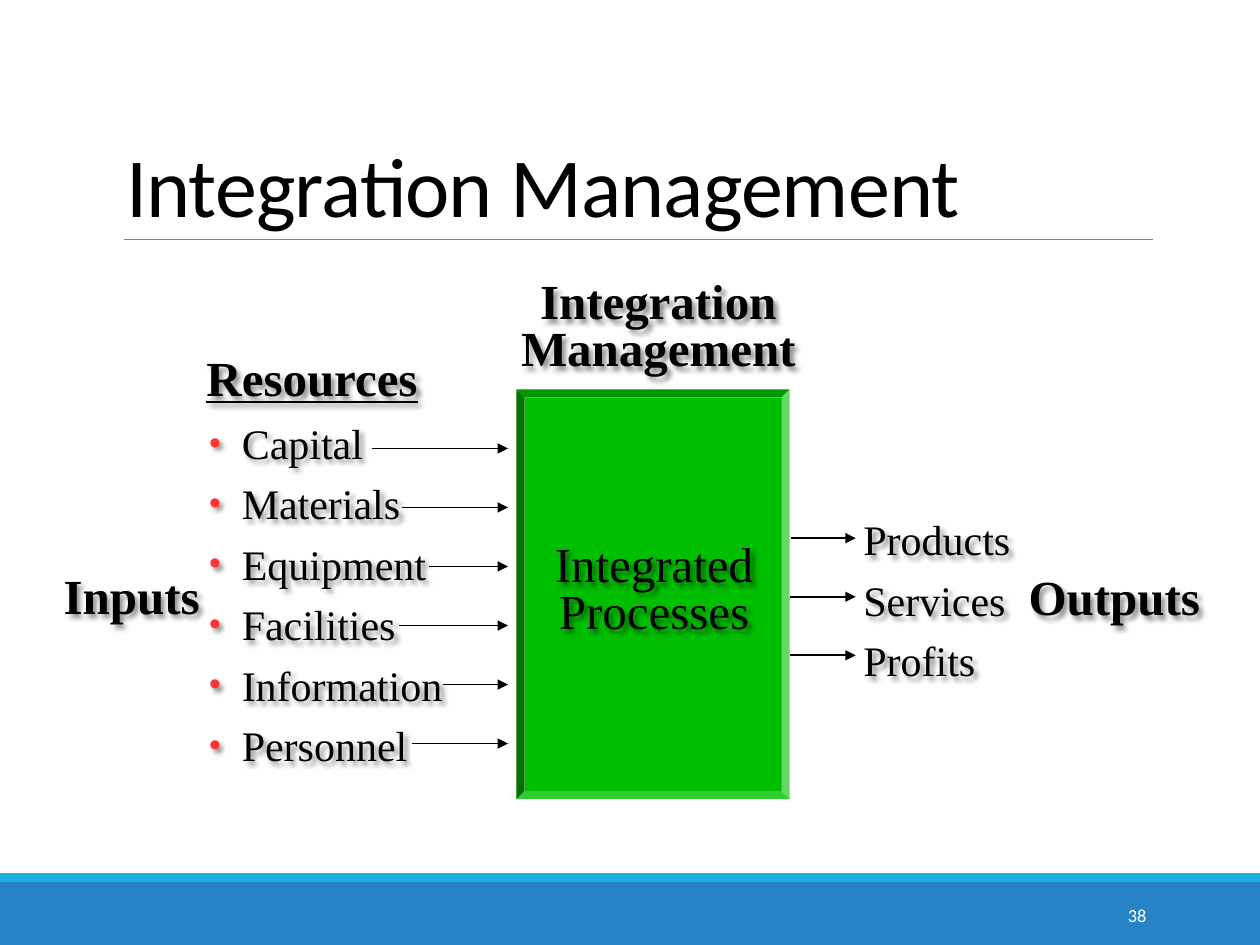
from lxml.etree import SubElement as Sub
from pptx import Presentation
from pptx.dml.color import RGBColor as Rgb
from pptx.enum.shapes import MSO_CONNECTOR as Conn, MSO_SHAPE as Kind
from pptx.enum.text import MSO_ANCHOR as Anchor, MSO_AUTO_SIZE as Auto, PP_ALIGN as Align
from pptx.oxml.ns import qn
from pptx.util import Cm, Pt

HUES = {"ink": "000000", "white": "FFFFFF", "blue": "2683C6", "sky": "1CADE4",
        "rule": "808080", "green": "00BE00", "dot": "FF3333"}
SERIF, SANS = "Times New Roman", "Calibri"

TITLE = "Integration Management"
INPUTS = [("Capital", 7.49), ("Materials", 8.1), ("Equipment", 8.64),
          ("Facilities", 8.05), ("Information", 8.94), ("Personnel", 8.31)]
OUTPUTS = [("Products", 15.95), ("Services", 15.93), ("Profits", 15.93)]
LABELS = [("Resources", (2.67, 6.53, 7.24, 2.36), True),
          ("Inputs", (0.51, 10.92, 4.29, 2.36), False),
          ("Integration\vManagement", (9.65, 5.46, 7.24, 2.36), False),
          ("Outputs", (20.32, 10.95, 4.29, 2.36), False)]
BARS = [((0, 17.78, 25.4, 1.27), "blue"), ((0, 17.6, 25.4, 0.18), "sky")]
FLOWS = [(INPUTS, 9.04, 1.19, 10.24), (OUTPUTS, 10.85, 1.18, 17.25)]


def hue(name):
    """Return the named colour."""
    return Rgb.from_string(HUES[name])


def place(shape, box):
    """Move a shape to a box given in centimetres."""
    shape.left, shape.top, shape.width, shape.height = map(Cm, box)


def shade(shape):
    """Give a soft shadow to the text of an unfilled shape."""
    shape.fill.background()
    fx = Sub(shape._element.spPr, qn("a:effectLst"))
    cast = Sub(fx, qn("a:outerShdw"), blurRad="38100", dist="38100",
               dir="2700000", algn="tl", rotWithShape="0")
    tint = Sub(cast, qn("a:srgbClr"), val=HUES["ink"])
    Sub(tint, qn("a:alpha"), val="43000")


def write(shape, lines, size=28, font=SERIF, tone="ink", bold=False, under=False,
          align=Align.CENTER, gap=0.8, anchor=Anchor.MIDDLE, hang=0, dot=False, track=0):
    """Fill a shape with formatted paragraphs."""
    frame = shape.text_frame
    frame.word_wrap, frame.auto_size = True, Auto.NONE
    frame.vertical_anchor = anchor
    frame.text = "\n".join(lines)
    for para in frame.paragraphs:
        para.alignment, para.line_spacing = align, gap
        para.space_before = para.space_after = Pt(0)
        props = para._p.get_or_add_pPr()
        props.set("marL", str(Cm(hang)))
        props.set("indent", str(-Cm(hang)))
        if dot:
            Sub(Sub(props, qn("a:buClr")), qn("a:srgbClr"), val=HUES["dot"])
            Sub(props, qn("a:buSzPct"), val="80000")
            Sub(props, qn("a:buChar"), char="•")
        else:
            Sub(props, qn("a:buNone"))
        for run in para.runs:
            face = run.font
            face.name, face.size, face.bold = font, Pt(size), bold
            face.underline, face.color.rgb = under, hue(tone)
            if track:
                run._r.get_or_add_rPr().set("spc", str(track))


def block(slide, kind, box, tone):
    """Add a plain filled shape."""
    shape = slide.shapes.add_shape(kind, *map(Cm, box))
    shape.shadow.inherit = False
    shape.fill.solid()
    shape.fill.fore_color.rgb = hue(tone)
    shape.line.fill.background()
    return shape


def link(slide, x, y, end, tone="ink", width=1, arrow=True):
    """Add a level line, with an arrowhead if asked."""
    line = slide.shapes.add_connector(Conn.STRAIGHT, Cm(x), Cm(y), Cm(end), Cm(y))
    line.line.color.rgb, line.line.width = hue(tone), Pt(width)
    if arrow:
        Sub(line.line._get_or_add_ln(), qn("a:tailEnd"), type="triangle")
    Sub(line._element.spPr, qn("a:effectLst"))


def label(slide, text, box, soft=True, **style):
    """Add a text box."""
    shape = slide.shapes.add_textbox(*map(Cm, box))
    write(shape, [text], **style)
    if soft:
        shade(shape)


def main():
    """Build and save the slide."""
    deck = Presentation()
    deck.slide_width, deck.slide_height = Cm(25.4), Cm(19.05)
    slide = deck.slides.add_slide(deck.slide_layouts[3])
    title, left, right = slide.placeholders

    for box, tone in BARS:
        block(slide, Kind.RECTANGLE, box, tone)
    link(slide, 2.49, 4.83, 23.24, tone="rule", width=0.5, arrow=False)

    place(title, (2.29, 0.79, 20.96, 4.04))
    write(title, [TITLE], size=48, font=SANS, align=Align.LEFT,
          anchor=Anchor.BOTTOM, track=-50)

    for body, items, box, dot in (
            (left, INPUTS, (3.96, 8.41, 5.4, 6.91), True),
            (right, OUTPUTS, (17.15, 8.53, 4.14, 6.91), False)):
        place(body, box)
        write(body, [name for name, _ in items], size=24, align=Align.LEFT,
              gap=1.2, hang=0.66, dot=dot)
        shade(body)

    panel = block(slide, Kind.BEVEL, (10.41, 7.85, 5.51, 8.26), "green")
    panel.rotation, panel.adjustments[0] = 180, 0.03
    label(slide, "Integrated\vProcesses", (10.57, 8.48, 5.23, 6.91))

    for items, top, step, end in FLOWS:
        for row, (_, start) in enumerate(items):
            link(slide, start, top + row * step, end)

    for text, box, under in LABELS:
        label(slide, text, box, bold=True, under=under)
    label(slide, "38", (20.62, 17.93, 2.74, 1.02), soft=False, size=10.5,
          font=SANS, tone="white", align=Align.RIGHT, gap=1)
    deck.save("out.pptx")


if __name__ == "__main__":
    main()
